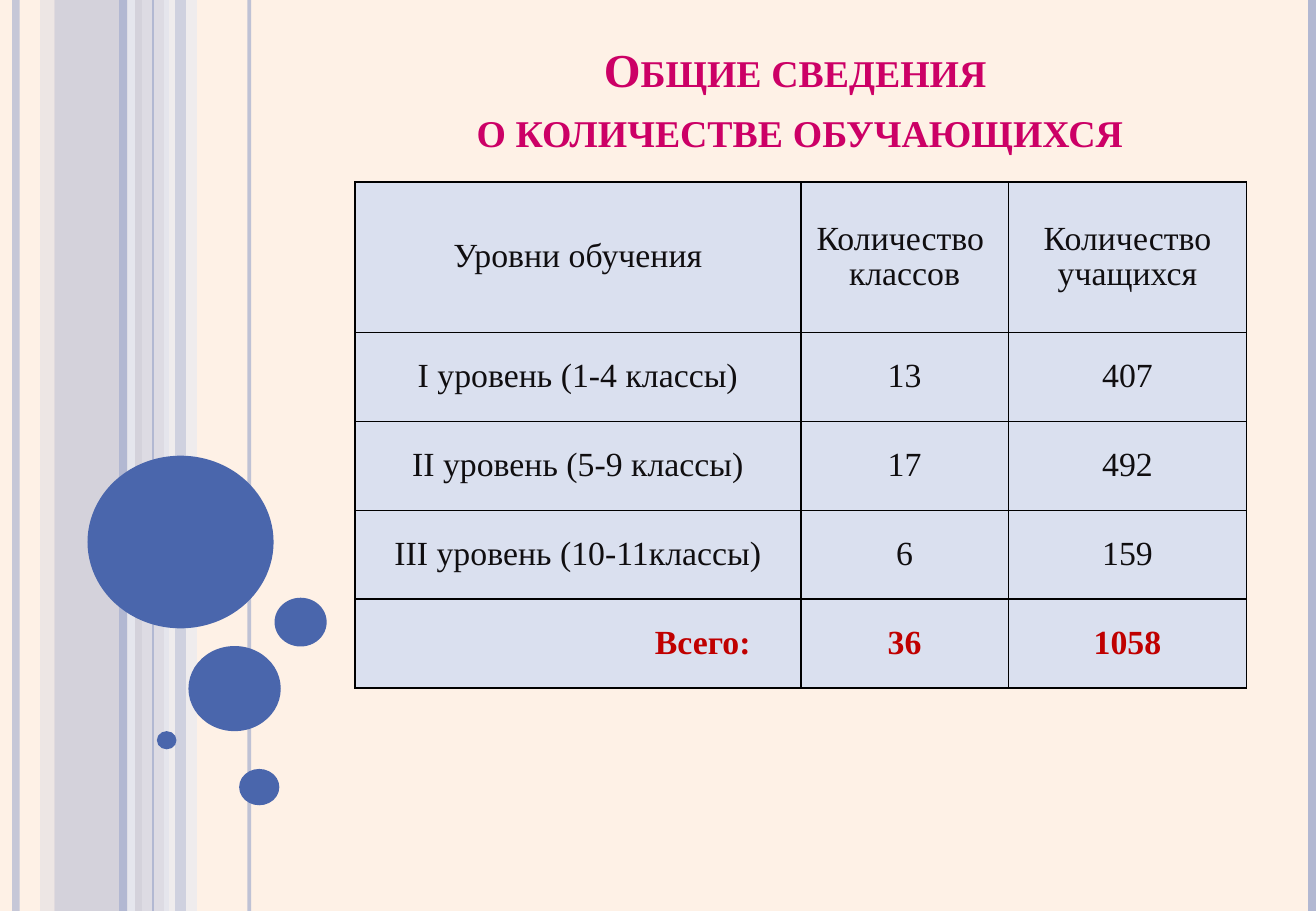
"""Builds a slide with a table of class and pupil numbers by school level."""
from lxml import etree
from pptx import Presentation
from pptx.dml.color import RGBColor
from pptx.enum.shapes import MSO_CONNECTOR, MSO_SHAPE
from pptx.enum.text import MSO_ANCHOR, MSO_AUTO_SIZE, PP_ALIGN
from pptx.oxml.ns import qn
from pptx.util import Cm, Pt

RECT, OVAL = MSO_SHAPE.RECTANGLE, MSO_SHAPE.OVAL
STRAIGHT = MSO_CONNECTOR.STRAIGHT
MIDDLE, BOTTOM = MSO_ANCHOR.MIDDLE, MSO_ANCHOR.BOTTOM
CENTER, RIGHT = PP_ALIGN.CENTER, PP_ALIGN.RIGHT
NO_AUTOFIT = MSO_AUTO_SIZE.NONE

FONT = "Times New Roman"
WIDTH, HEIGHT = 27.51, 19.05
COLORS = {
    "background": "FEF1E6", "stripe": "B2B8D2", "light": "D0D3E3",
    "pale": "E9EAF1", "bubble": "4A66AC", "title": "CC0066",
    "cell": "DAE0EF", "text": "100E10", "total": "C00000", "border": "000000",
}
BANDS = [
    (1.14, 1.83, "stripe", 54), (0.84, 0.3, "light", 36),
    (2.97, 0.56, "light", 70), (3.43, 0.69, "pale", 71),
    (3.66, 0.23, "stripe", 51),
]
STRIPES = [
    (0.33, 4.5, "stripe", 73), (2.74, 4.5, "pale", 83),
    (2.57, 4.5, "stripe", 100), (5.21, 2.25, "stripe", 82),
    (3.2, 0.75, "stripe", 100), (27.43, 4.5, "stripe", 100),
]
BUBBLES = [
    (1.83, 9.53, 3.89, 3.61), (3.94, 13.51, 1.93, 1.78),
    (3.28, 15.29, 0.41, 0.38), (5, 16.08, 0.84, 0.76),
    (5.74, 12.5, 1.09, 1.02),
]
COLUMNS = [9.32, 4.34, 4.98]
ROW_HEIGHTS = [3.14] + [1.86] * 4
ROWS = [
    ("Уровни обучения", "Количество \nклассов", "Количество\nучащихся"),
    ("I уровень (1-4 классы)", "13", "407"),
    ("II уровень (5-9 классы)", "17", "492"),
    ("III уровень (10-11классы)", "6", "159"),
    ("Всего:", "36", "1058"),
]


def rgb(name):
    return RGBColor.from_string(COLORS[name])


def set_opacity(sp, percent):
    color = sp._element.spPr.find(".//" + qn("a:srgbClr"))
    etree.SubElement(color, qn("a:alpha"), val=str(percent * 1000))


def style_paragraph(p, size, color, bold=False, align=CENTER):
    p.alignment = align
    p.font.name, p.font.size = FONT, Pt(size)
    p.font.bold = bold
    p.font.color.rgb = rgb(color)


def add_figure(s, kind, left, top, width, height, color, opacity=100):
    sp = s.shapes.add_shape(kind, Cm(left), Cm(top), Cm(width), Cm(height))
    sp.fill.solid()
    sp.fill.fore_color.rgb = rgb(color)
    sp.line.fill.background()
    sp.shadow.inherit = False
    if opacity < 100:
        set_opacity(sp, opacity)


def add_stripe(s, x, width, color, opacity):
    line = s.shapes.add_connector(STRAIGHT, Cm(x), 0, Cm(x), Cm(HEIGHT))
    line.line.width = Pt(width)
    line.line.color.rgb = rgb(color)
    etree.SubElement(line._element.spPr, qn("a:effectLst"))
    if opacity < 100:
        set_opacity(line, opacity)


def set_title(s):
    title = s.shapes.title
    title.left, title.top = Cm(7.62), Cm(0.43)
    title.width, title.height = Cm(18.21), Cm(2.97)
    tf = title.text_frame
    tf.word_wrap, tf.auto_size = True, NO_AUTOFIT
    tf.vertical_anchor = BOTTOM
    p = tf.paragraphs[0]
    p.text = "Общие сведения \vо количестве обучающихся"
    p.line_spacing = 1.05
    style_paragraph(p, 28, "title", bold=True)
    for r in p.runs:
        r._r.get_or_add_rPr().set("cap", "small")


def set_borders(cell):
    tc_pr = cell._tc.get_or_add_tcPr()
    for i, side in enumerate(("lnL", "lnR", "lnT", "lnB")):
        ln = etree.Element(qn("a:" + side), w=str(Pt(1)))
        fill = etree.SubElement(ln, qn("a:solidFill"))
        etree.SubElement(fill, qn("a:srgbClr"), val=COLORS["border"])
        tc_pr.insert(i, ln)


def fill_cell(cell, text, total, align):
    cell.fill.solid()
    cell.fill.fore_color.rgb = rgb("cell")
    cell.vertical_anchor = MIDDLE
    cell.text = text
    for p in cell.text_frame.paragraphs:
        p.line_spacing = 0.95
        style_paragraph(p, 20, "total" if total else "text", total, align)
    if align == RIGHT:
        cell.margin_right = Cm(1.05)
    set_borders(cell)


def add_levels_table(s):
    table = s.shapes.add_table(
        len(ROWS), len(COLUMNS), Cm(7.42), Cm(3.81),
        Cm(sum(COLUMNS)), Cm(sum(ROW_HEIGHTS))).table
    for column, width in zip(table.columns, COLUMNS):
        column.width = Cm(width)
    for i, (values, height) in enumerate(zip(ROWS, ROW_HEIGHTS)):
        table.rows[i].height = Cm(height)
        total = i == len(ROWS) - 1
        for j, text in enumerate(values):
            align = RIGHT if total and j == 0 else CENTER
            fill_cell(table.cell(i, j), text, total, align)


def main():
    prs = Presentation()
    prs.slide_width, prs.slide_height = Cm(WIDTH), Cm(HEIGHT)
    s = prs.slides.add_slide(prs.slide_layouts[5])
    s.background.fill.solid()
    s.background.fill.fore_color.rgb = rgb("background")
    for left, width, color, opacity in BANDS:
        add_figure(s, RECT, left, 0, width, HEIGHT, color, opacity)
    for stripe in STRIPES:
        add_stripe(s, *stripe)
    for bubble in BUBBLES:
        add_figure(s, OVAL, *bubble, "bubble")
    set_title(s)
    add_levels_table(s)
    prs.save("out.pptx")


if __name__ == "__main__":
    main()
